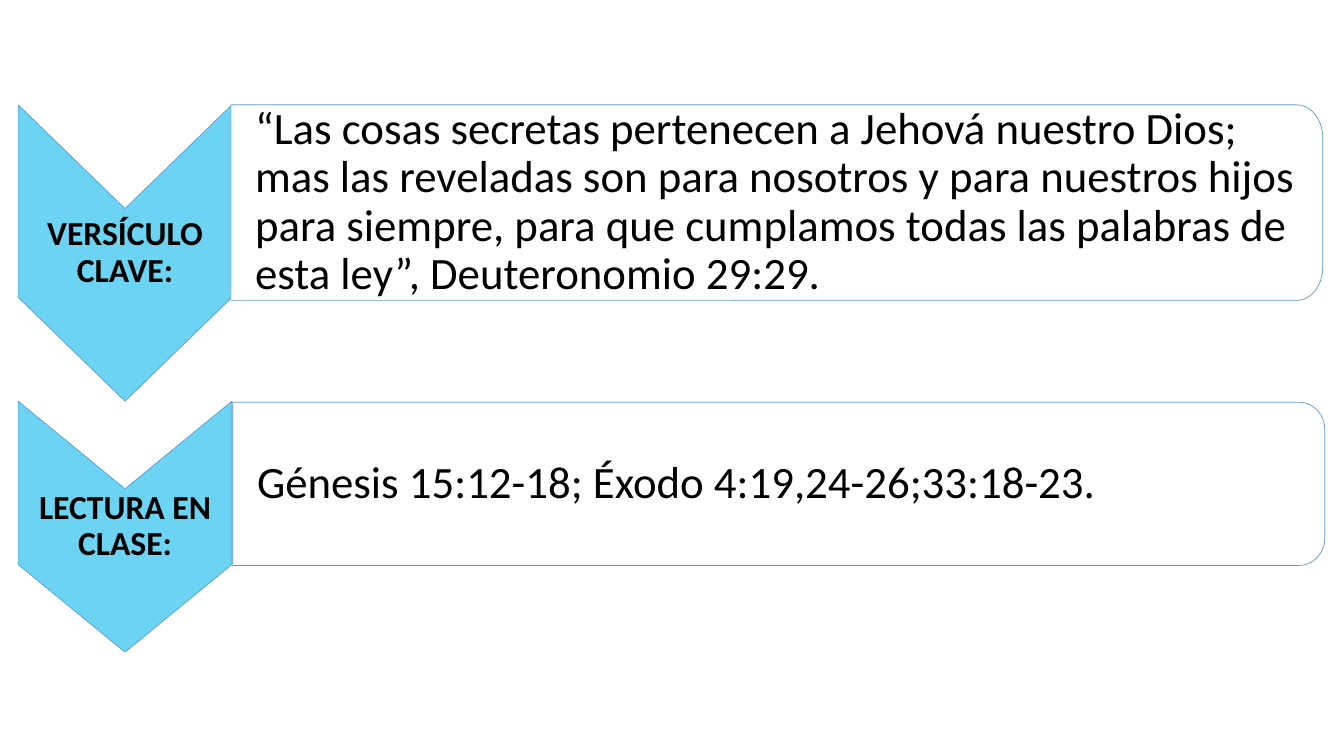
from dataclasses import dataclass
from math import cos, pi, sin

from lxml import etree
from pptx import Presentation
from pptx.dml.color import RGBColor
from pptx.enum.text import MSO_ANCHOR, PP_ALIGN
from pptx.oxml.ns import qn
from pptx.shapes.autoshape import Shape
from pptx.slide import Slide
from pptx.util import Inches, Pt

MIDDLE = MSO_ANCHOR.MIDDLE
CENTER, LEFT = PP_ALIGN.CENTER, PP_ALIGN.LEFT

COLORS = {"chevron": "6DD3F3", "panel": "FFFFFF", "line": "5B9BD5", "text": "000000"}
CHEVRON_LEFT, CHEVRON_WIDTH = 0.18, 2.12
PANEL_WIDTH, CORNER_WIDTH, CORNER_STEPS = 10.83, 0.26, 16

Point = tuple[float, float]


@dataclass
class TextStyle:
    size: int
    bold: bool
    alignment: PP_ALIGN
    margins: tuple[float, float, float, float]


@dataclass
class Section:
    label: str
    body: str
    top: float
    side_height: float
    notch: float
    panel_left: float
    panel_top: float
    panel_height: float
    corner_height: float


LABEL_STYLE = TextStyle(24, True, CENTER, (0.01, 0.89, 0.01, 0.89))
BODY_STYLE = TextStyle(32, False, LEFT, (0.24, 0.1, 0.1, 0.1))

SECTIONS = [
    Section(
        "VERSÍCULO CLAVE:",
        "“Las cosas secretas pertenecen a Jehová nuestro Dios; mas las reveladas "
        "son para nosotros y para nuestros hijos para siempre, para que cumplamos "
        "todas las palabras de esta ley”, Deuteronomio 29:29.",
        1.04, 1.91, 1.03, 2.29, 1.04, 1.94, 0.33,
    ),
    Section(
        "LECTURA EN CLASE:",
        "Génesis 15:12-18; Éxodo 4:19,24-26;33:18-23.",
        3.98, 1.62, 0.87, 2.31, 3.99, 1.62, 0.27,
    ),
]


def chevron_outline(section: Section) -> list[Point]:
    left, right = CHEVRON_LEFT, CHEVRON_LEFT + CHEVRON_WIDTH
    middle = (left + right) / 2
    top, bottom = section.top, section.top + section.side_height
    return [
        (right, top), (right, bottom), (middle, bottom + section.notch),
        (left, bottom), (left, top), (middle, top + section.notch),
    ]


def panel_outline(section: Section) -> list[Point]:
    """Return a rectangle whose two right corners are rounded."""
    left, top = section.panel_left, section.panel_top
    bottom = top + section.panel_height
    center_x = left + PANEL_WIDTH - CORNER_WIDTH
    angles = [step * pi / 2 / CORNER_STEPS for step in range(CORNER_STEPS + 1)]
    upper = [
        (center_x + CORNER_WIDTH * sin(angle),
         top + section.corner_height * (1 - cos(angle)))
        for angle in angles
    ]
    lower = [(x, top + bottom - y) for x, y in reversed(upper)]
    return [(left, top), *upper, *lower, (left, bottom)]


def add_outline(slide: Slide, outline: list[Point], fill: str) -> Shape:
    points = [(Inches(x), Inches(y)) for x, y in outline]
    builder = slide.shapes.build_freeform(*points[0])
    builder.add_line_segments(points[1:], close=True)
    shape = builder.convert_to_shape()
    shape.shadow.inherit = False
    shape.fill.solid()
    shape.fill.fore_color.rgb = RGBColor.from_string(COLORS[fill])
    shape.line.color.rgb = RGBColor.from_string(COLORS["line"])
    shape.line.width = Pt(0.5)
    return shape


def set_opacity(shape: Shape, percent: int) -> None:
    color = shape.fill._xPr.find(qn("a:solidFill"))[0]
    etree.SubElement(color, qn("a:alpha"), val=str(percent * 1000))


def write_text(shape: Shape, text: str, style: TextStyle) -> None:
    frame = shape.text_frame
    frame.word_wrap = True
    frame.vertical_anchor = MIDDLE
    sides = ("margin_left", "margin_top", "margin_right", "margin_bottom")
    for side, margin in zip(sides, style.margins):
        setattr(frame, side, Inches(margin))
    paragraph = frame.paragraphs[0]
    paragraph.text = text
    paragraph.alignment = style.alignment
    paragraph.line_spacing = 0.9
    font = paragraph.runs[0].font
    font_format = {"name": "Calibri", "size": Pt(style.size), "bold": style.bold}
    for attribute, value in font_format.items():
        setattr(font, attribute, value)
    font.color.rgb = RGBColor.from_string(COLORS["text"])


def add_section(slide: Slide, section: Section) -> None:
    chevron = add_outline(slide, chevron_outline(section), "chevron")
    write_text(chevron, section.label, LABEL_STYLE)
    panel = add_outline(slide, panel_outline(section), "panel")
    set_opacity(panel, 90)
    write_text(panel, section.body, BODY_STYLE)


def main() -> None:
    presentation = Presentation()
    presentation.slide_width = Inches(13.33)
    presentation.slide_height = Inches(7.5)
    slide = presentation.slides.add_slide(presentation.slide_layouts[6])
    for section in SECTIONS:
        add_section(slide, section)
    presentation.save("out.pptx")


if __name__ == "__main__":
    main()
